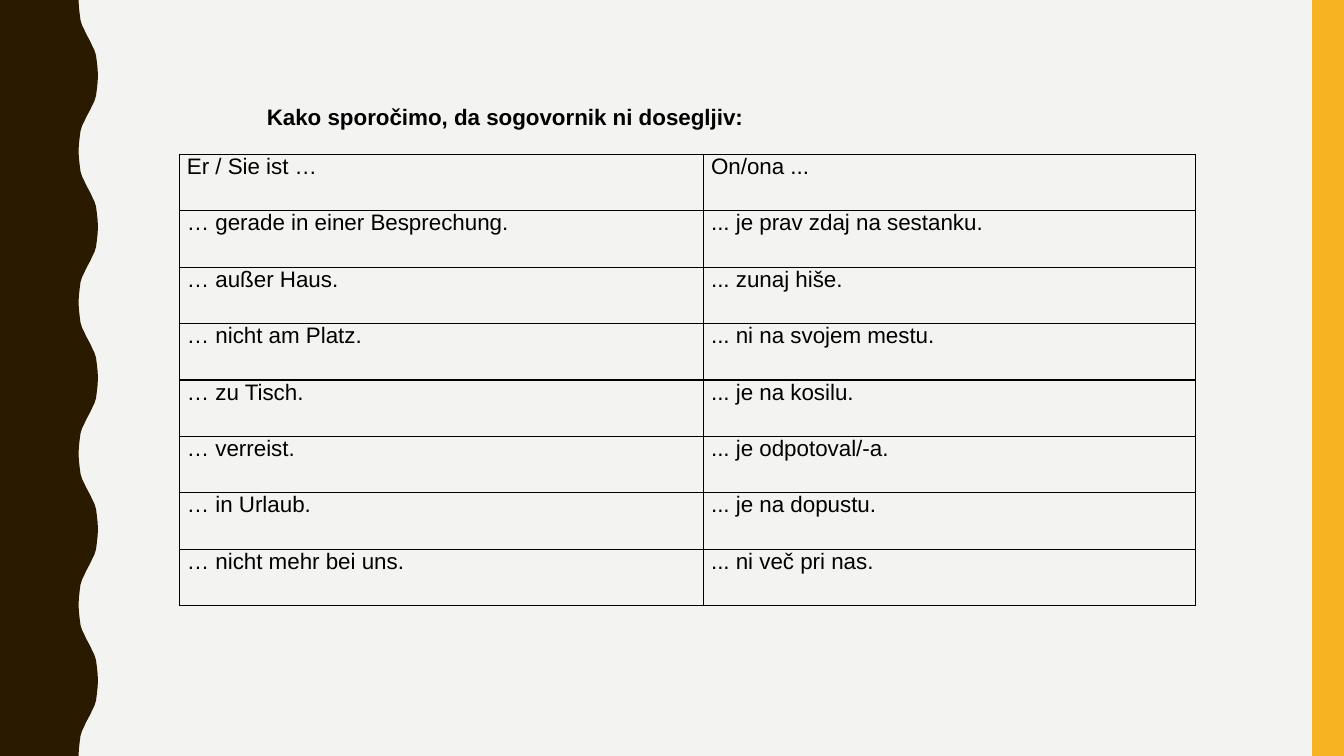
import lxml.etree
import pptx
import pptx.dml.color
import pptx.enum.text
import pptx.oxml.ns
import pptx.util

Cm = pptx.util.Cm
PAGE_WIDTH, PAGE_HEIGHT = 33.87, 19.05
PHRASES = [
    ("Er / Sie ist …", "On/ona ..."),
    ("… gerade in einer Besprechung.", "... je prav zdaj na sestanku."),
    ("… außer Haus.", "... zunaj hiše."),
    ("… nicht am Platz.", "... ni na svojem mestu."),
    ("… zu Tisch.", "... je na kosilu."),
    ("… verreist.", "... je odpotoval/-a."),
    ("… in Urlaub.", "... je na dopustu."),
    ("… nicht mehr bei uns.", "... ni več pri nas."),
]


def paint(fill, color):
    """Give a fill one solid colour."""
    fill.solid()
    fill.fore_color.rgb = pptx.dml.color.RGBColor.from_string(color)


def write(frame, text, size=16, bold=False, color="000000", align="LEFT"):
    """Write one formatted paragraph into a text frame."""
    para = frame.paragraphs[0]
    para.alignment = getattr(pptx.enum.text.PP_ALIGN, align)
    span = para.add_run()
    span.text = text
    span.font.name = "Arial"
    span.font.size = pptx.util.Pt(size)
    span.font.bold = bold
    paint(span.font.fill, color)


def finish(shape, color):
    """Fill a decorative shape, without outline or shadow."""
    paint(shape.fill, color)
    shape.line.fill.background()
    shape.shadow.inherit = False


def add_wavy_band(page, left, top, width, height, waves=5):
    """Draw a band whose right edge runs in equal waves."""
    period, depth = height / waves, 0.49
    valley = left + width - depth
    rise = [(0, 0), (0.01, 0.18), (0.03, 0.36), (0.05, 0.51),
            (0.09, 0.64), (0.14, 0.74), (0.19, 0.85)]
    half = rise + [(depth / 2, period / 4)]
    half += [(depth - dx, period / 2 - dy) for dx, dy in reversed(rise)]
    wave = half + [(dx, period - dy) for dx, dy in reversed(half[:-1])]
    edge = [(valley + dx, top + number * period + dy)
            for number in range(waves) for dx, dy in wave]
    corners = edge + [(left, top + height)]
    builder = page.shapes.build_freeform(Cm(left), Cm(top), scale=1.0)
    builder.add_line_segments([(Cm(x), Cm(y)) for x, y in corners], close=True)
    finish(builder.convert_to_shape(), "2A1A00")


def add_side_bar(page, left, top, width, height):
    """Draw the plain bar at the right edge."""
    bar = page.shapes.add_shape(pptx.enum.shapes.MSO_SHAPE.RECTANGLE,
                                Cm(left), Cm(top), Cm(width), Cm(height))
    finish(bar, "F8B323")


def add_heading(page, left, top, width, height):
    """Place the title placeholder and write the heading."""
    title = page.shapes.title
    title.left, title.top, title.width, title.height = map(Cm, (left, top, width, height))
    frame = title.text_frame
    frame.word_wrap = False
    frame.auto_size = pptx.enum.text.MSO_AUTO_SIZE.NONE
    frame.vertical_anchor = pptx.enum.text.MSO_ANCHOR.TOP
    write(frame, "Kako sporočimo, da sogovornik ni dosegljiv:", bold=True)


def add_borders(cell, color="000000", points=1):
    """Draw a line on all four sides of a table cell."""
    properties = cell._tc.get_or_add_tcPr()
    for side in ("lnL", "lnR", "lnT", "lnB"):
        line = lxml.etree.SubElement(properties, pptx.oxml.ns.qn(f"a:{side}"),
                                     w=str(pptx.util.Pt(points)))
        solid = lxml.etree.SubElement(line, pptx.oxml.ns.qn("a:solidFill"))
        lxml.etree.SubElement(solid, pptx.oxml.ns.qn("a:srgbClr"), val=color)


def add_phrase_table(page, left, top, width, height, first_column=13.21):
    """Build the table of German phrases and Slovene meanings."""
    table = page.shapes.add_table(len(PHRASES), 2, Cm(left), Cm(top),
                                  Cm(width), Cm(height)).table
    table.first_row = table.horz_banding = False
    table.columns[0].width = Cm(first_column)
    table.columns[1].width = Cm(width - first_column)
    for row, phrases in zip(table.rows, PHRASES):
        row.height = Cm(height / len(PHRASES))
        for cell, phrase in zip(row.cells, phrases):
            cell.margin_left = cell.margin_right = Cm(0.19)
            cell.margin_top = cell.margin_bottom = 0
            add_borders(cell)
            cell.fill.background()
            write(cell.text_frame, phrase, align="JUSTIFY")


def main():
    """Build and save the deck."""
    deck = pptx.Presentation()
    deck.slide_width, deck.slide_height = Cm(PAGE_WIDTH), Cm(PAGE_HEIGHT)
    page = deck.slides.add_slide(deck.slide_layouts[5])
    paint(page.background.fill, "F3F3F2")
    add_wavy_band(page, 0, 0, 2.47, PAGE_HEIGHT)
    add_side_bar(page, PAGE_WIDTH - 0.8, 0, 0.8, PAGE_HEIGHT)
    add_heading(page, 6.47, 2.46, 12.67, 1.63)
    add_phrase_table(page, 4.52, 3.89, 25.6, 11.37)
    deck.save("out.pptx")


if __name__ == "__main__":
    main()
